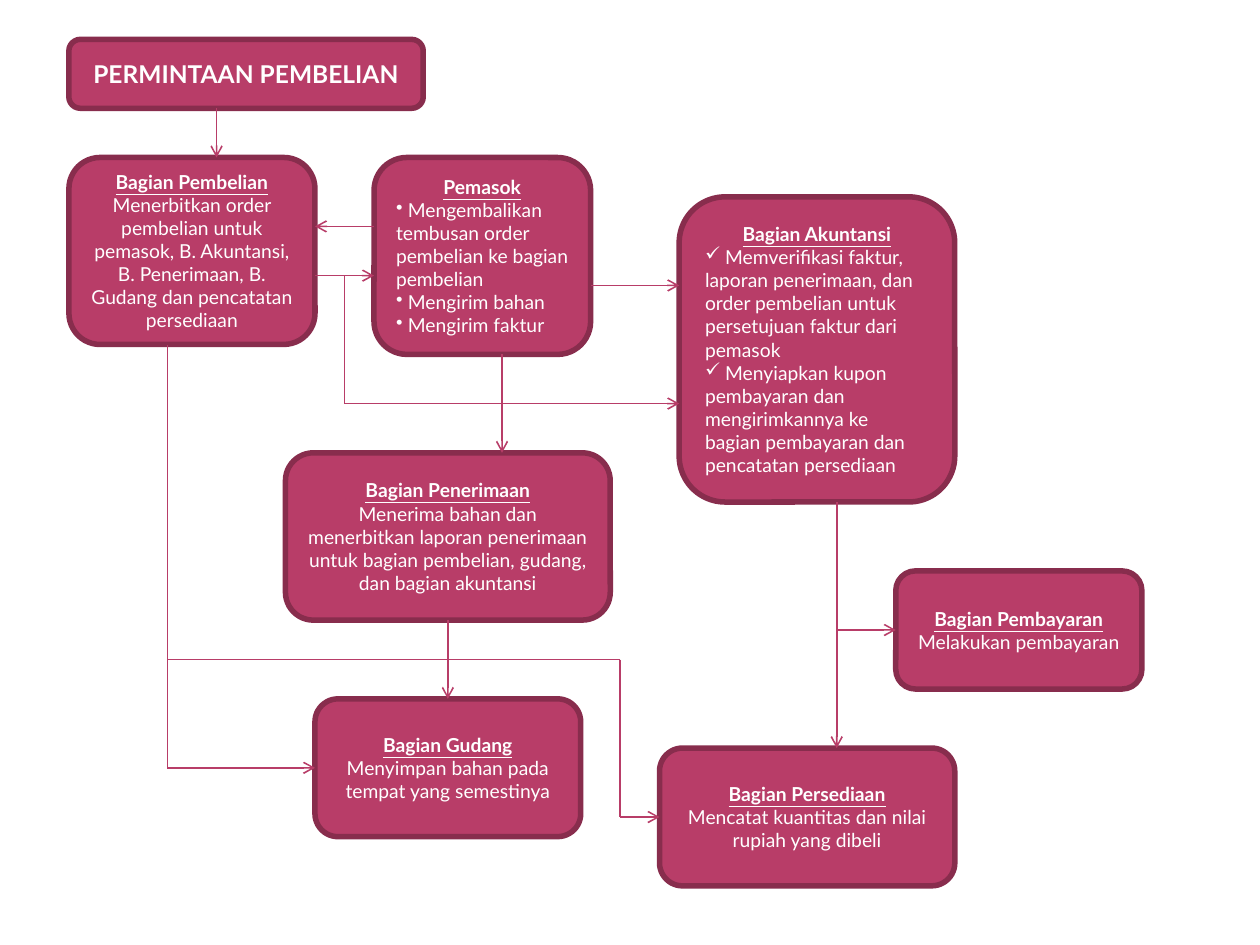
from itertools import pairwise

from lxml import etree
from pptx import Presentation
from pptx import util as u
from pptx.dml.color import RGBColor
from pptx.enum import shapes, text
from pptx.oxml import ns

ROSE = RGBColor(0xB8, 0x3D, 0x68)
WINE = RGBColor(0x88, 0x2D, 0x4D)
WHITE = RGBColor(0xFF, 0xFF, 0xFF)
FONT = "Lato"
WIDTH, HEIGHT = u.Inches(10), u.Inches(7.5)
CELL = WIDTH / 128

TITLE = (7, 4, 36, 7)
UNITS = {
    "Bagian Pembelian": ((7, 16, 25, 19), "", [
        "Menerbitkan order pembelian untuk pemasok, B. Akuntansi, "
        "B. Penerimaan, B. Gudang dan pencatatan persediaan"]),
    "Pemasok": ((38, 16, 22, 20), "•", [
        "Mengembalikan tembusan order pembelian ke bagian pembelian",
        "Mengirim bahan",
        "Mengirim faktur"]),
    "Bagian Penerimaan": ((29, 46, 33, 17), "", [
        "Menerima bahan dan menerbitkan laporan penerimaan untuk "
        "bagian pembelian, gudang, dan bagian akuntansi"]),
    "Bagian Gudang": ((32, 71, 27, 14), "", [
        "Menyimpan bahan pada tempat yang semestinya"]),
    "Bagian Akuntansi": ((69, 20, 28, 31), "✓", [
        "Memverifikasi faktur, laporan penerimaan, dan order pembelian "
        "untuk persetujuan faktur dari pemasok",
        "Menyiapkan kupon pembayaran dan mengirimkannya ke bagian "
        "pembayaran dan pencatatan persediaan"]),
    "Bagian Pembayaran": ((91, 58, 25, 12), "", ["Melakukan pembayaran"]),
    "Bagian Persediaan": ((67, 76, 30, 14), "", [
        "Mencatat kuantitas dan nilai rupiah yang dibeli"]),
}
ROUTES = [
    [(22, 11), (22, 16)],
    [(32, 28), (38, 28)],
    [(17, 35), (17, 78), (32, 78)],
    [(17, 67), (63, 67), (63, 83), (67, 83)],
    [(35, 28), (35, 41), (69, 41)],
    [(38, 23), (32, 23)],
    [(60, 29), (69, 29)],
    [(85, 51), (85, 76)],
    [(85, 64), (91, 64)],
    [(51, 36), (51, 46)],
    [(45.5, 63), (45.5, 71)],
]


def grid(*cells):
    """Turn grid counts into lengths."""
    return [u.Emu(round(n * CELL)) for n in cells]


def style(para, size, bold, line=False):
    """Format every run of a paragraph."""
    for run in para.runs:
        font = run.font
        font.name, font.size, font.bold = FONT, u.Pt(size), bold
        font.underline = line
        font.color.rgb = WHITE


def card(slide, box, head, size=11, mark="", lines=(), line=True):
    """Draw a rounded box with a heading and its lines of text."""
    shape = slide.shapes.add_shape(
        shapes.MSO_SHAPE.ROUNDED_RECTANGLE, *grid(*box))
    shape.shadow.inherit = False
    shape.fill.solid()
    shape.fill.fore_color.rgb = ROSE
    shape.line.color.rgb = WINE
    shape.line.width = u.Pt(3.15)
    frame = shape.text_frame
    frame.word_wrap = True
    frame.vertical_anchor = text.MSO_ANCHOR.MIDDLE
    para = frame.paragraphs[0]
    para.text = head
    para.alignment = text.PP_ALIGN.CENTER
    style(para, size, True, line)
    for item in lines:
        para = frame.add_paragraph()
        para.text = f" {item}" if mark else item
        para.alignment = text.PP_ALIGN.LEFT if mark else text.PP_ALIGN.CENTER
        if mark:
            props = para._p.get_or_add_pPr()
            etree.SubElement(props, ns.qn("a:buChar"), char=mark)
        style(para, size, False)
    return shape


def sides(box):
    """List the middles of a box's sides in connection order."""
    x, y, w, h = box
    return [(x + w / 2, y), (x, y + h / 2),
            (x + w / 2, y + h), (x + w, y + h / 2)]


def route(slide, points, ports):
    """Draw a chain of lines ending in an arrow, joined where it can be."""
    for start, end in pairwise(points):
        link = slide.shapes.add_connector(
            shapes.MSO_CONNECTOR.STRAIGHT, *grid(*start, *end))
        link.line.color.rgb = ROSE
        link.line.width = u.Pt(0.9)
        if end == points[-1]:
            etree.SubElement(link.line._get_or_add_ln(),
                             ns.qn("a:tailEnd"), type="arrow")
        etree.SubElement(link._element.spPr, ns.qn("a:effectLst"))
        if start in ports:
            link.begin_connect(*ports[start])
        if end in ports:
            link.end_connect(*ports[end])


def flow(slide):
    """Place the boxes and the routes between them."""
    card(slide, TITLE, "PERMINTAAN PEMBELIAN", 14, line=False)
    ports = {}
    for head, (box, mark, lines) in UNITS.items():
        shape = card(slide, box, head, mark=mark, lines=lines)
        ports.update({spot: (shape, n) for n, spot in enumerate(sides(box))})
    for points in ROUTES:
        route(slide, points, ports)


def main():
    """Build and save the deck."""
    deck = Presentation()
    deck.slide_width, deck.slide_height = WIDTH, HEIGHT
    flow(deck.slides.add_slide(deck.slide_layouts[6]))
    deck.save("out.pptx")


if __name__ == "__main__":
    main()
